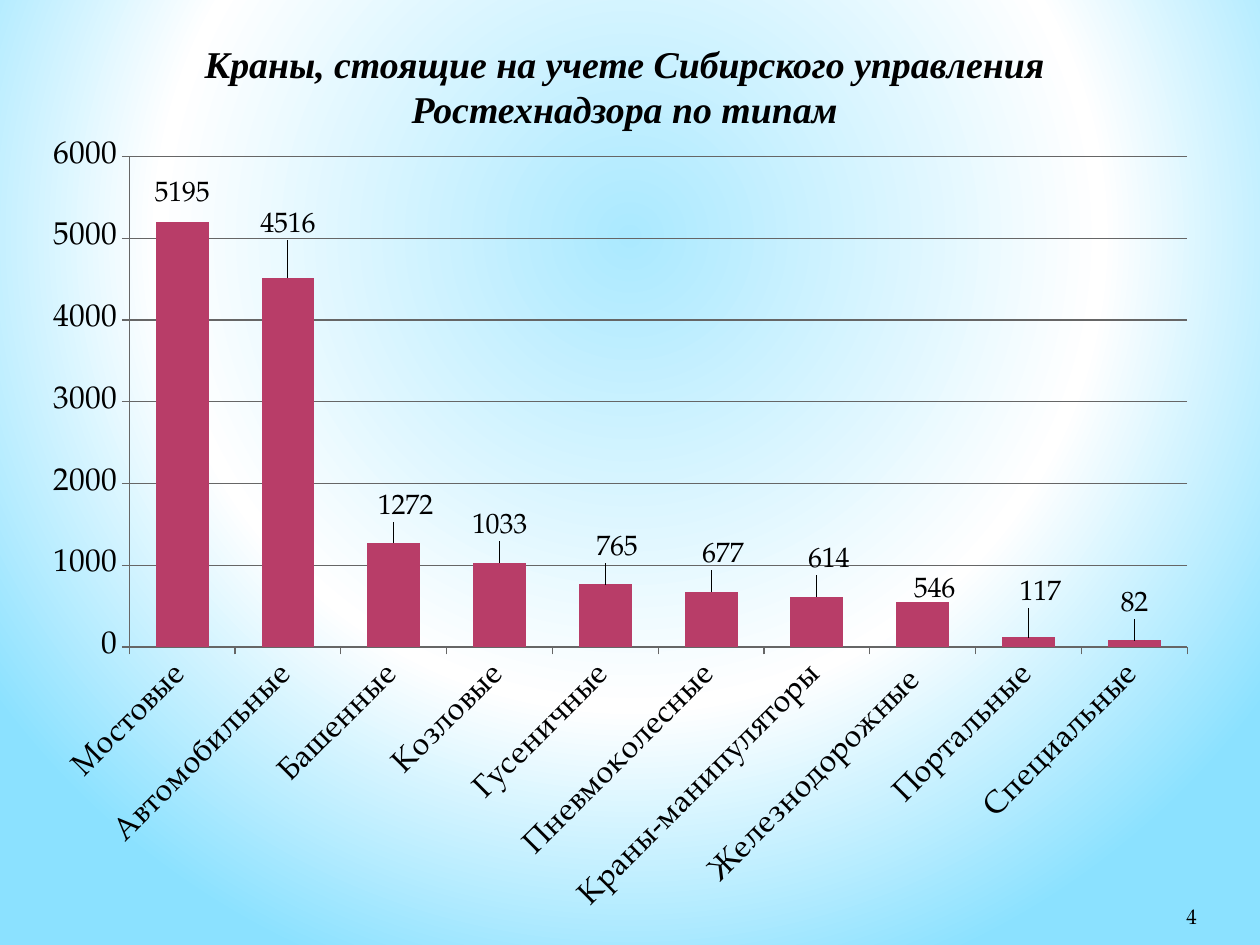
from dataclasses import dataclass

from lxml.etree import SubElement
from pptx import Presentation
from pptx.chart.data import CategoryChartData
from pptx.dml.color import RGBColor
from pptx.enum.chart import XL_CHART_TYPE as ChartType
from pptx.enum.chart import XL_LABEL_POSITION as LabelPosition
from pptx.enum.chart import XL_TICK_MARK as TickMark
from pptx.enum.text import MSO_ANCHOR as Anchor
from pptx.enum.text import MSO_AUTO_SIZE as AutoSize
from pptx.enum.text import PP_ALIGN as Align
from pptx.oxml import parse_xml
from pptx.oxml.ns import nsdecls, qn
from pptx.util import Cm, Pt


@dataclass(frozen=True)
class Theme:
    text: str = "000000"
    bar: str = "B83D68"
    grid: str = "666666"
    backdrop: tuple = ((0, "ABE9FF"), (60, "FFFFFF"), (100, "8BE1FF"))
    body_font: str = "TeX Gyre Pagella"
    title_font: str = "Times New Roman"
    title_size: float = 21.6
    axis_size: int = 18
    label_size: int = 16
    number_size: int = 12


CRANES = [
    ("Мостовые", 5195, 0, -0.01),
    ("Автомобильные", 4516, 0, -0.04),
    ("Башенные", 1272, 0.01, -0.02),
    ("Козловые", 1033, 0, -0.02),
    ("Гусеничные", 765, 0.01, -0.02),
    ("Пневмоколесные", 677, 0.01, -0.02),
    ("Краны-манипуляторы", 614, 0.01, -0.02),
    ("Железнодорожные ", 546, 0.01, 0.01),
    ("Портальные", 117, 0.01, -0.03),
    ("Специальные", 82, 0, -0.02),
]


class SlideBuilder:
    def __init__(self, slide, theme):
        self.slide = slide
        self.theme = theme

    def style(self, font, size, name=None):
        font.name = name or self.theme.body_font
        font.size = Pt(size)
        font.color.rgb = RGBColor.from_string(self.theme.text)

    def background(self):
        self.slide.background.fill.solid()
        solid = self.slide.element.xpath(".//p:bgPr/a:solidFill")[0]
        stops = "".join(
            f'<a:gs pos="{position * 1000}"><a:srgbClr val="{color}"/></a:gs>'
            for position, color in self.theme.backdrop
        )
        gradient = parse_xml(
            f'<a:gradFill {nsdecls("a")} rotWithShape="1"><a:gsLst>{stops}</a:gsLst>'
            '<a:path path="circle">'
            '<a:fillToRect l="20000" t="10000" r="20000" b="60000"/>'
            "</a:path></a:gradFill>"
        )
        solid.getparent().replace(solid, gradient)

    def text(self, words, area, size, align, name=None, emphasis=False):
        box = self.slide.shapes.add_textbox(*map(Cm, area))
        frame = box.text_frame
        frame.text = words
        frame.word_wrap = True
        para = frame.paragraphs[0]
        para.alignment = align
        span = para.runs[0]
        self.style(span.font, size, name)
        span.font.bold = span.font.italic = emphasis
        return frame

    def title(self, words, area):
        frame = self.text(words, area, self.theme.title_size, Align.CENTER,
                          self.theme.title_font, emphasis=True)
        frame.auto_size = AutoSize.SHAPE_TO_FIT_TEXT

    def page_number(self, words, area):
        frame = self.text(words, area, self.theme.number_size, Align.RIGHT)
        frame.vertical_anchor = Anchor.BOTTOM
        frame.margin_left = frame.margin_right = 0

    def layout(self, **values):
        layout = parse_xml(f'<c:layout {nsdecls("c")}><c:manualLayout/></c:layout>')
        for tag, value in values.items():
            SubElement(layout[0], qn(f"c:{tag}")).set("val", str(value))
        return layout

    def column_chart(self, rows, area):
        data = CategoryChartData()
        data.categories = [row[0] for row in rows]
        data.add_series("Series 1", [row[1] for row in rows])
        chart = self.slide.shapes.add_chart(
            ChartType.COLUMN_CLUSTERED, *map(Cm, area), data).chart
        chart.has_legend = False
        chart.has_title = False
        self.style(chart.font, self.theme.axis_size)
        self.axes(chart)
        self.columns(chart.plots[0], rows)
        plot_area = chart.element.xpath(".//c:plotArea")[0]
        for old in plot_area.findall(qn("c:layout")):
            plot_area.remove(old)
        plot_area.insert(0, self.layout(
            layoutTarget="inner", xMode="edge", yMode="edge",
            x=0.08, y=0.04, w=0.9, h=0.61))

    def axes(self, chart):
        values, categories = chart.value_axis, chart.category_axis
        values.minimum_scale, values.maximum_scale = 0, 6000
        values.major_unit = 1000
        values.has_major_gridlines = True
        for axis in (values, categories):
            axis.major_tick_mark = TickMark.OUTSIDE
            self.style(axis.tick_labels.font, self.theme.axis_size)
        for line in (values.format.line, categories.format.line,
                     values.major_gridlines.format.line):
            line.color.rgb = RGBColor.from_string(self.theme.grid)
            line.width = Pt(0.75)
        body = categories._element.find(qn("c:txPr")).find(qn("a:bodyPr"))
        body.set("rot", str(-45 * 60000))
        body.set("vert", "horz")

    def columns(self, plot, rows):
        plot.gap_width = 100
        plot.vary_by_categories = False
        series = plot.series[0]
        series.format.fill.solid()
        series.format.fill.fore_color.rgb = RGBColor.from_string(self.theme.bar)
        labels = series.data_labels
        labels.show_value = True
        labels.position = LabelPosition.OUTSIDE_END
        self.style(labels.font, self.theme.label_size)
        for index, (_, _, shift_x, shift_y) in enumerate(rows):
            label = series.points[index].data_label
            self.style(label.font, self.theme.label_size)
            label.position = LabelPosition.OUTSIDE_END
        for mark, (_, _, shift_x, shift_y) in zip(
                series._element.xpath(".//c:dLbl"), rows):
            mark.insert(1, self.layout(x=shift_x, y=shift_y))


def main():
    deck = Presentation()
    deck.slide_width, deck.slide_height = Cm(25.4), Cm(19.05)
    page = SlideBuilder(deck.slides.add_slide(deck.slide_layouts[6]), Theme())
    page.background()
    page.column_chart(CRANES, (0.71, 2.51, 23.7, 16.21))
    page.title("Краны, стоящие на учете Сибирского управления Ростехнадзора по типам",
               (2.69, 0.69, 19.81, 2.11))
    page.page_number("4", (22.02, 17.83, 2.11, 1.02))
    deck.save("out.pptx")


if __name__ == "__main__":
    main()
